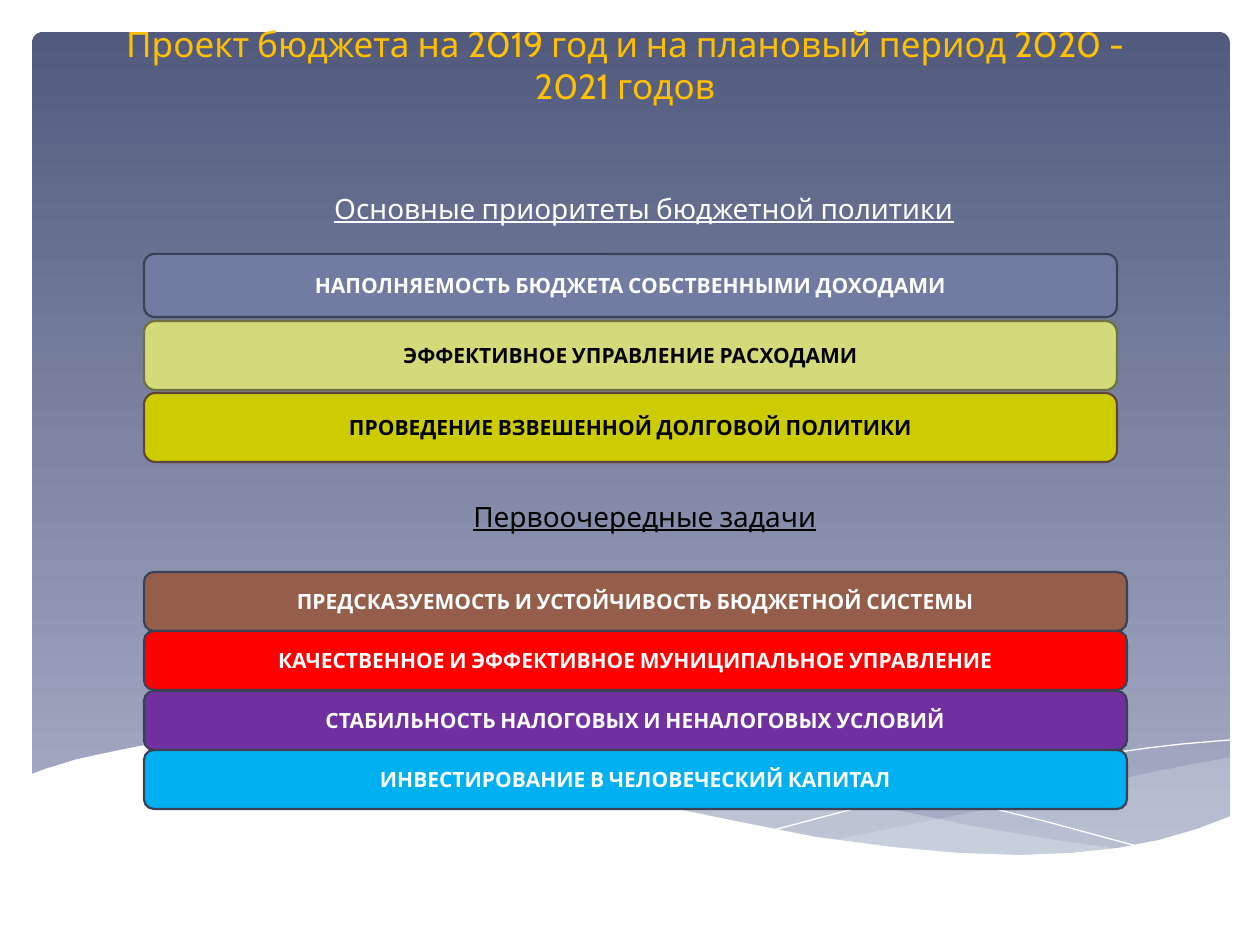
from dataclasses import dataclass

from lxml import etree
from pptx import Presentation, util as u
from pptx.dml.color import RGBColor
from pptx.enum import shapes, text
from pptx.oxml import ns

SCALE = 914400 / 126  # EMU in one px


@dataclass(frozen=True)
class Theme:
    font: str = "Cabin"
    title_size: int = 20
    heading_size: int = 16
    bar_size: int = 12
    bar_line: float = 1.25
    white: str = "FFFFFF"
    black: str = "000000"
    gold: str = "FFC000"
    sky_top: str = "525B7E"
    sky_bottom: str = "AAB0C8"
    mist: str = "DDE9EC"
    slate: str = "727CA3"
    slate_dark: str = "3B4155"
    lime: str = "D2DA7A"
    lime_dark: str = "6D7240"
    olive: str = "CCCC00"
    brown_dark: str = "60453B"
    brown: str = "955E4B"
    red: str = "FF0000"
    purple: str = "7030A0"
    blue: str = "00B0F0"


def px(value):
    return u.Emu(round(value * SCALE))


def rgb(value):
    return RGBColor.from_string(value)


class SlideBuilder:
    def __init__(self, slide, theme):
        self.slide = slide
        self.theme = theme

    def rounded(self, left, top, width, height):
        shape = self.slide.shapes.add_shape(
            shapes.MSO_SHAPE.ROUNDED_RECTANGLE, px(left), px(top), px(width), px(height))
        shape.shadow.inherit = False
        return shape

    def backdrop(self, left, top, width, height):
        shape = self.rounded(left, top, width, height)
        shape.adjustments[0] = 0.013
        shape.line.fill.background()
        shape.fill.gradient()
        shape.fill.gradient_angle = 270
        colors = (self.theme.sky_top, self.theme.sky_bottom)
        for stop, color in zip(shape.fill.gradient_stops, colors):
            stop.color.rgb = rgb(color)

    def outline(self, points, close):
        builder = self.slide.shapes.build_freeform(*points[0], scale=SCALE)
        builder.add_line_segments(points[1:], close=close)
        shape = builder.convert_to_shape()
        shape.shadow.inherit = False
        return shape

    def wave(self, points, color, opacity=100):
        shape = self.outline(points, True)
        shape.line.fill.background()
        shape.fill.solid()
        shape.fill.fore_color.rgb = rgb(color)
        if opacity < 100:
            color_element = shape.element.spPr.find(
                ns.qn("a:solidFill") + "/" + ns.qn("a:srgbClr"))
            etree.SubElement(color_element, ns.qn("a:alpha"), val=str(opacity * 1000))

    def hairline(self, points):
        shape = self.outline(points, False)
        shape.fill.background()
        shape.line.color.rgb = rgb(self.theme.white)
        shape.line.width = u.Pt(0)

    def set_words(self, shape, words, size, color, anchor, bold=False, underline=False):
        """Put one centred paragraph into the shape."""
        frame = shape.text_frame
        frame.word_wrap = True
        frame.vertical_anchor = anchor
        frame.text = words
        paragraph = frame.paragraphs[0]
        paragraph.alignment = text.PP_ALIGN.CENTER
        font = paragraph.runs[0].font
        font.name = self.theme.font
        font.size = u.Pt(size)
        font.bold = bold
        font.underline = underline
        font.color.rgb = rgb(color)

    def label(self, left, top, width, height, words, size, color,
              anchor=text.MSO_ANCHOR.TOP, underline=False):
        box = self.slide.shapes.add_textbox(px(left), px(top), px(width), px(height))
        self.set_words(box, words, size, color, anchor, underline=underline)

    def bar(self, left, top, width, height, words, fill, line, color):
        shape = self.rounded(left, top, width, height)
        shape.fill.solid()
        shape.fill.fore_color.rgb = rgb(fill)
        shape.line.color.rgb = rgb(line)
        shape.line.width = u.Pt(self.theme.bar_line)
        self.set_words(shape, words, self.theme.bar_size, color,
                       text.MSO_ANCHOR.MIDDLE, bold=True)


RIGHT_WAVE = [
    (1231, 757), (1162, 770), (1086, 787), (983, 810), (919, 823), (834, 840),
    (891, 848), (955, 854), (1013, 856), (1077, 855), (1132, 849), (1180, 838), (1231, 818)]
MIDDLE_WAVE = [
    (1126, 850), (1056, 840), (978, 827), (891, 809), (794, 786), (736, 772),
    (682, 761), (633, 753), (586, 747), (529, 742), (479, 740), (435, 740),
    (396, 744), (362, 747), (407, 753), (457, 761), (510, 772), (567, 786),
    (668, 809), (759, 828), (839, 843), (912, 853), (975, 856), (1032, 857), (1095, 855)]
FALLING_LINE = [
    (391, 752), (434, 746), (473, 743), (525, 742), (568, 742), (616, 746),
    (672, 751), (733, 759), (803, 769), (877, 782), (959, 800), (1048, 822), (1144, 848)]
RISING_LINE = [
    (774, 830), (823, 817), (877, 803), (944, 788), (1017, 771),
    (1092, 756), (1148, 748), (1183, 744), (1230, 740)]
WHITE_WAVE = [
    (1231, 816), (1197, 829), (1159, 840), (1118, 848), (1071, 853), (1019, 855),
    (959, 853), (892, 847), (816, 837), (730, 820), (634, 800), (563, 784),
    (492, 767), (428, 755), (368, 746), (315, 741), (266, 738), (223, 738),
    (184, 740), (150, 744), (120, 750), (96, 755), (74, 760), (58, 765),
    (45, 769), (29, 775), (29, 921), (1231, 921)]


def main():
    presentation = Presentation()
    presentation.slide_width = u.Inches(10)
    presentation.slide_height = u.Inches(7.5)
    slide = presentation.slides.add_slide(presentation.slide_layouts[6])
    theme = Theme()
    builder = SlideBuilder(slide, theme)

    builder.backdrop(32, 32, 1198, 832)
    builder.wave(RIGHT_WAVE, theme.mist, 29)
    builder.wave(MIDDLE_WAVE, theme.mist, 40)
    builder.hairline(FALLING_LINE)
    builder.hairline(RISING_LINE)
    builder.wave(WHITE_WAVE, theme.white)

    builder.label(84, 66, 1082, 47,
                  "Проект бюджета на 2019 год и на плановый период 2020 - 2021 годов",
                  theme.title_size, theme.gold, anchor=text.MSO_ANCHOR.BOTTOM)
    builder.label(103, 185, 1082, 47, "Основные приоритеты бюджетной политики",
                  theme.heading_size, theme.white, underline=True)
    builder.label(253, 493, 784, 47, "Первоочередные задачи",
                  theme.heading_size, theme.black, underline=True)

    priorities = [
        (254, 63, "НАПОЛНЯЕМОСТЬ БЮДЖЕТА СОБСТВЕННЫМИ ДОХОДАМИ",
         theme.slate, theme.slate_dark, theme.white),
        (321, 69, "ЭФФЕКТИВНОЕ УПРАВЛЕНИЕ РАСХОДАМИ",
         theme.lime, theme.lime_dark, theme.black),
        (393, 69, "ПРОВЕДЕНИЕ ВЗВЕШЕННОЙ ДОЛГОВОЙ ПОЛИТИКИ",
         theme.olive, theme.brown_dark, theme.black)]
    for top, height, words, fill, line, color in priorities:
        builder.bar(144, top, 973, height, words, fill, line, color)

    tasks = [
        ("ПРЕДСКАЗУЕМОСТЬ И УСТОЙЧИВОСТЬ БЮДЖЕТНОЙ СИСТЕМЫ", theme.brown),
        ("КАЧЕСТВЕННОЕ И ЭФФЕКТИВНОЕ МУНИЦИПАЛЬНОЕ УПРАВЛЕНИЕ", theme.red),
        ("СТАБИЛЬНОСТЬ НАЛОГОВЫХ И НЕНАЛОГОВЫХ УСЛОВИЙ", theme.purple),
        ("ИНВЕСТИРОВАНИЕ В ЧЕЛОВЕЧЕСКИЙ КАПИТАЛ", theme.blue)]
    for index, (words, fill) in enumerate(tasks):
        top = 572 + 238 * index // len(tasks)
        builder.bar(144, top, 983, 59, words, fill, theme.slate_dark, theme.white)

    presentation.save("out.pptx")


if __name__ == "__main__":
    main()
